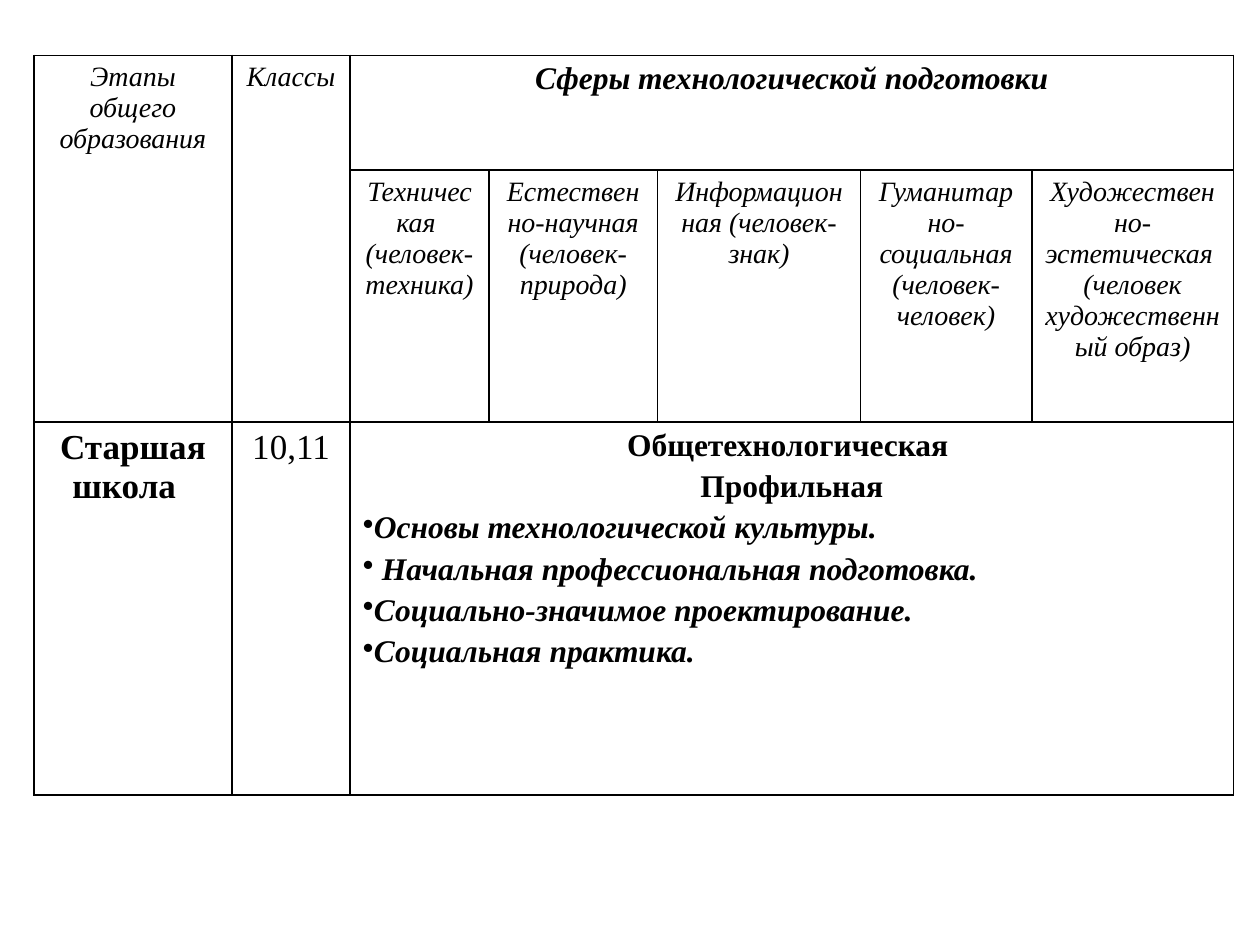
from lxml.etree import SubElement as Sub
from pptx import Presentation
from pptx.dml.color import RGBColor
from pptx.enum.text import PP_ALIGN as Align
from pptx.oxml.ns import qn
from pptx.util import Inches, Pt


def paint(hue):
    return RGBColor.from_string(hue)


class Page:
    face = "Times New Roman"
    ink = "000000"

    def __init__(self, deck):
        self.slide = deck.slides.add_slide(deck.slide_layouts[6])

    def grid(self, left, top, cols, rows):
        """Add a plain table with ruled, unfilled cells."""
        frame = self.slide.shapes.add_table(
            len(rows), len(cols), Inches(left), Inches(top),
            Inches(sum(cols)), Inches(sum(rows)))
        table = frame.table
        table.first_row = table.horz_banding = False
        for col, width in zip(table.columns, cols):
            col.width = Inches(width)
        for row, height in zip(table.rows, rows):
            row.height = Inches(height)
        for cell in table.iter_cells():
            self.rule(cell)
            cell.fill.background()
        return table

    def rule(self, cell, width=1):
        props = cell._tc.get_or_add_tcPr()
        for side in "LRTB":
            line = Sub(props, qn(f"a:ln{side}"), w=str(Pt(width)))
            fill = Sub(line, qn("a:solidFill"))
            Sub(fill, qn("a:srgbClr"), val=self.ink)

    def label(self, cell, lines, size, bold=False, slant=False,
              gap=None, dots=()):
        """Fill a cell; lines whose index is in dots get a bullet."""
        frame = cell.text_frame
        frame.text = "\n".join(lines)
        for i, para in enumerate(frame.paragraphs):
            if gap:
                para.space_before = Pt(gap)
            if i in dots:
                para.alignment = Align.LEFT
                Sub(para._p.get_or_add_pPr(), qn("a:buChar"), char="•")
            else:
                para.alignment = Align.CENTER
            font = para.font
            font.name, font.size = self.face, Pt(size)
            font.bold, font.italic = bold, slant or i in dots
            font.color.rgb = paint(self.ink)


def main():
    deck = Presentation()
    deck.slide_width, deck.slide_height = Inches(10), Inches(7.5)
    page = Page(deck)

    # Table frame and merged cells
    table = page.grid(0.27, 0.44, [1.57, 0.94, 1.1, 1.34, 1.61, 1.36, 1.6],
                      [0.91, 2, 2.96])
    at = table.cell
    for col in (0, 1):
        at(0, col).merge(at(1, col))
    for row in (0, 2):
        at(row, 2).merge(at(row, 6))

    # Headings
    for col, text in enumerate(["Этапы общего образования", "Классы"]):
        page.label(at(0, col), [text], 16, slant=True)
    page.label(at(0, 2), ["Сферы технологической подготовки"], 18,
               bold=True, slant=True)

    # Spheres of training
    spheres = [
        ["Техническая ", "(человек-техника)"],
        ["Естественно-научная", "(человек- природа)"],
        ["Информационная (человек-знак)"],
        ["Гуманитарно-социальная (человек-человек)"],
        ["Художественно-эстетическая ", "(человек художественный образ)"],
    ]
    for col, lines in enumerate(spheres, 2):
        page.label(at(1, col), lines, 16, slant=True)

    # Senior school
    page.label(at(2, 0), ["Старшая школа  "], 20, bold=True)
    page.label(at(2, 1), ["10,11"], 20)
    page.label(at(2, 2), [
        "Общетехнологическая ",
        "Профильная",
        "Основы технологической культуры.",
        " Начальная профессиональная подготовка.",
        "Социально-значимое проектирование.",
        "Социальная практика.",
    ], 18, bold=True, gap=3.6, dots=range(2, 6))

    deck.save("out.pptx")


if __name__ == "__main__":
    main()
